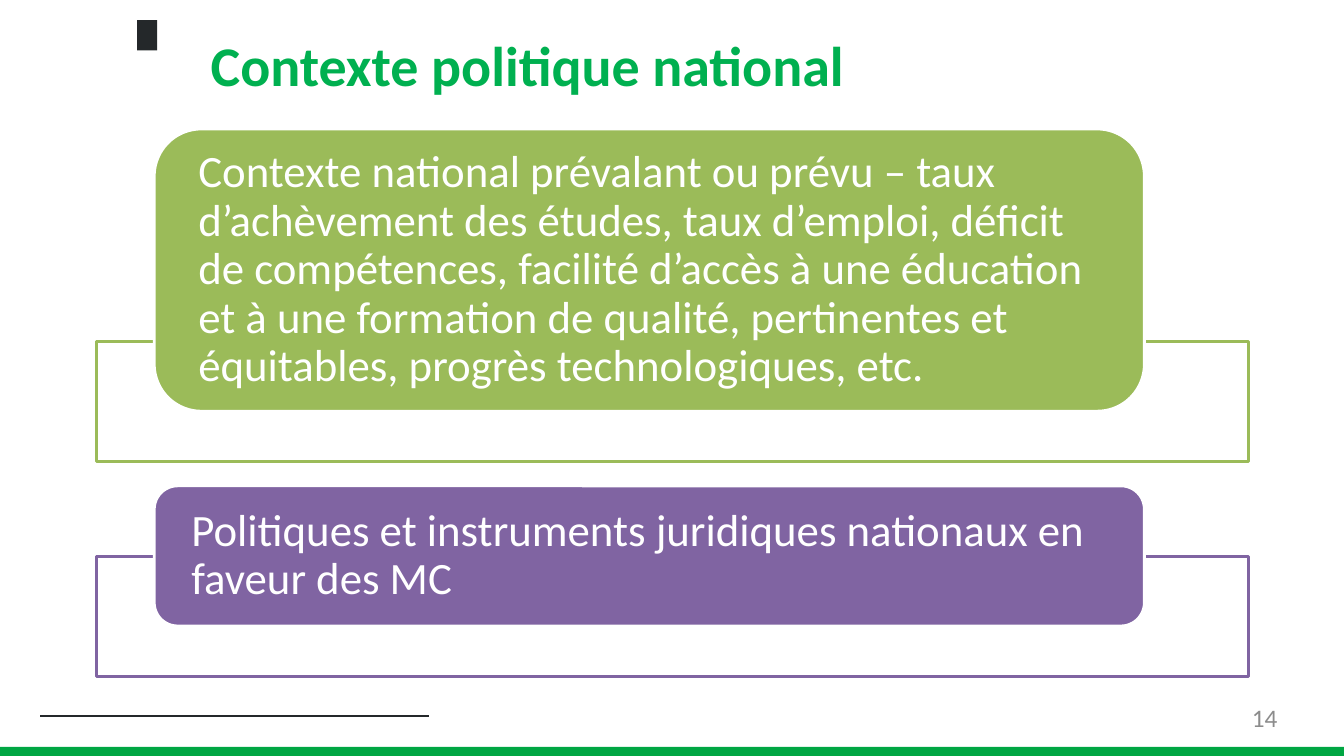
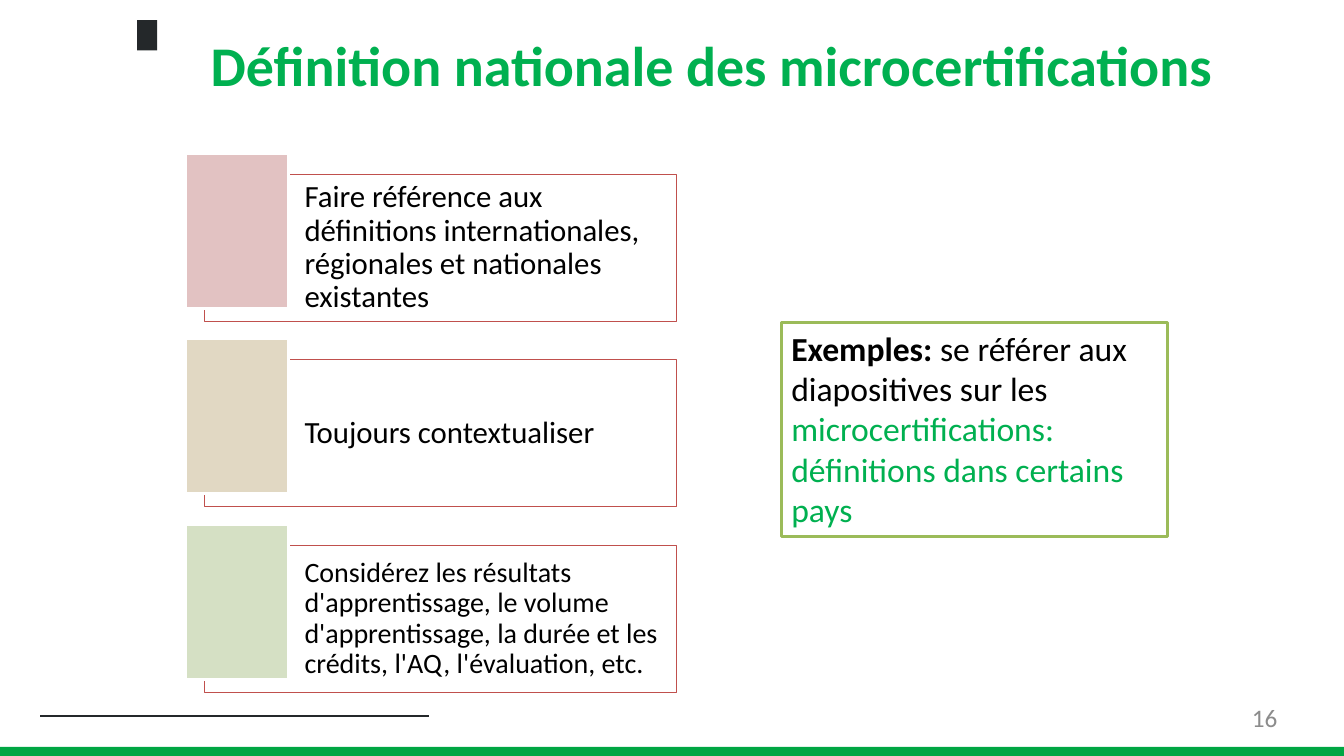
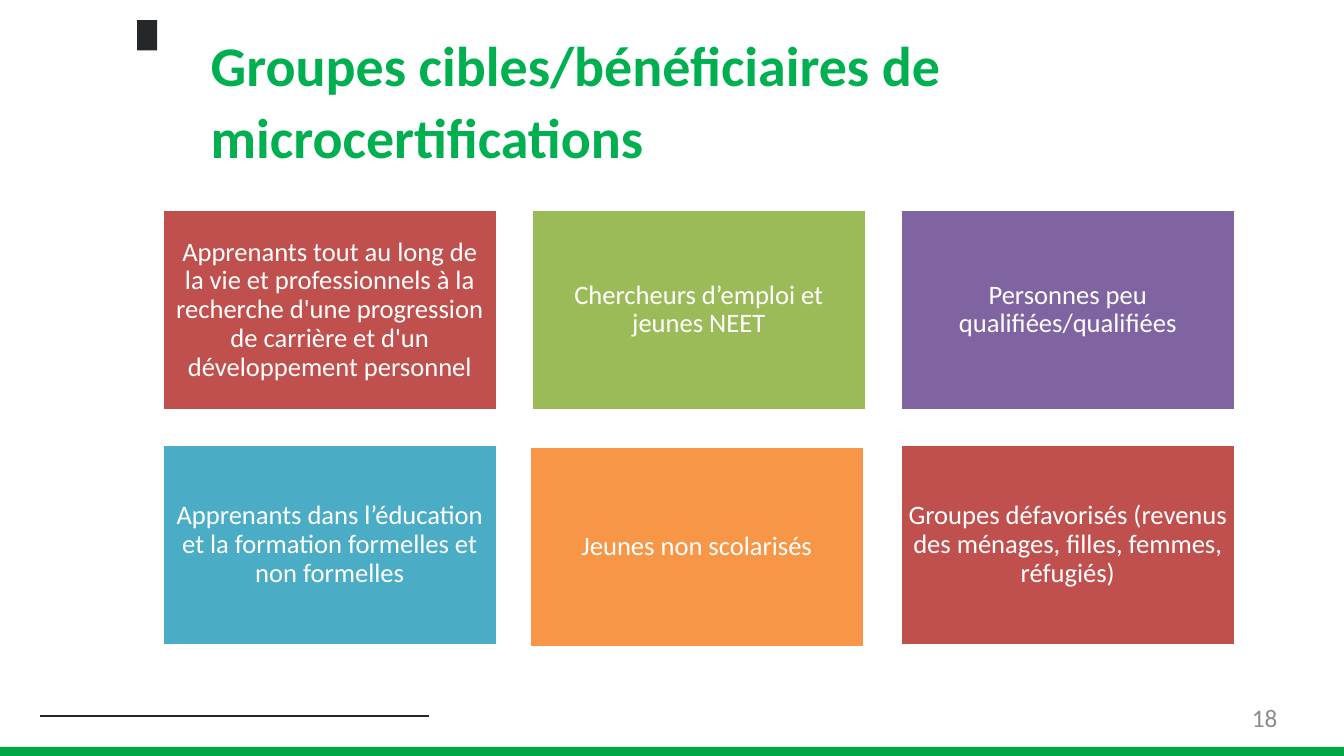
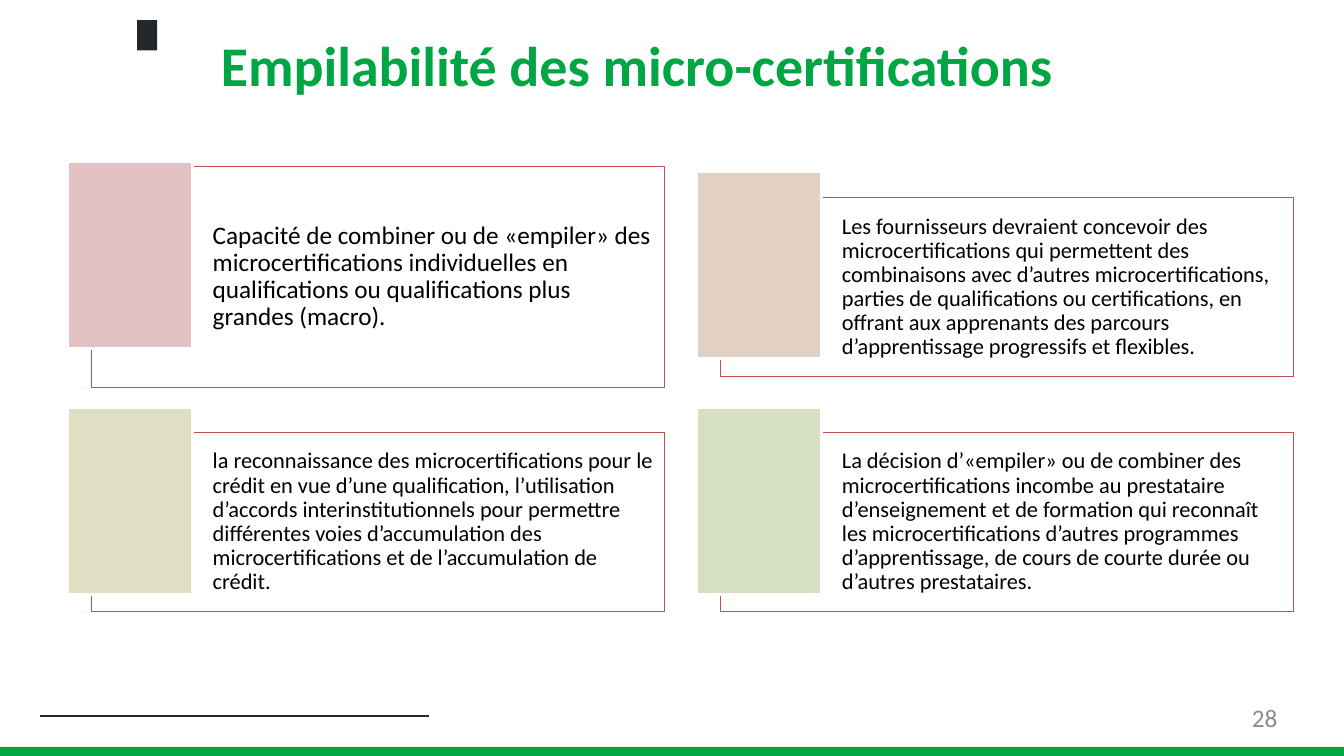
from lxml.etree import SubElement
from pptx import Presentation
from pptx.dml.color import RGBColor
from pptx.enum.shapes import MSO_CONNECTOR, MSO_SHAPE
from pptx.enum.text import MSO_ANCHOR, PP_ALIGN
from pptx.oxml.ns import qn
from pptx.util import Inches, Pt

# Shared look
FONT = "Calibri"
WHITE, BLACK, INK, GREY = "FFFFFF", "000000", "24282A", "8C8C8C"
BAND, GREEN = "00A643", "00B050"
RED, LIME, PURPLE, TEAL, ORANGE = "C0504D", "9BBB59", "8064A2", "4BACC6", "F79646"
ROSE, SAND, CLAY, OLIVE, SAGE = "E2C2C2", "E1D8C3", "E2D1C2", "E1DFC3", "D5E0C4"

# Slide 1: text, colour, pill top and height, frame top
CONTEXT = [
    ("Contexte national prévalant ou prévu – taux d’achèvement des études, "
     "taux d’emploi, déficit de compétences, facilité d’accès à une éducation "
     "et à une formation de qualité, pertinentes et équitables, progrès "
     "technologiques, etc.", LIME, 1.28, 2.8, 3.39),
    ("Politiques et instruments juridiques nationaux en faveur des MC",
     PURPLE, 4.82, 1.39, 5.52),
]

# Slide 2: text, tab colour, text size, inset
STEPS = [
    ("Faire référence aux définitions internationales, régionales et "
     "nationales existantes", ROSE, 22, 0.15),
    ("Toujours contextualiser", SAND, 22, 0.15),
    ("Considérez les résultats d'apprentissage, le volume d'apprentissage, la "
     "durée et les crédits, l'AQ, l'évaluation, etc.", SAGE, 20, 0.08),
]
EXAMPLE = [
    ("Exemples: ", {"bold": True}),
    ("se référer aux diapositives sur les ", {}),
    ("microcertifications: définitions dans certains pays", {"color": GREEN}),
]

# Slide 3: text, colour, shift from the grid
GROUPS = [
    ("Apprenants tout au long de la vie et professionnels à la recherche d'une "
     "progression de carrière et d'un développement personnel", RED, 0),
    ("Chercheurs d’emploi et jeunes NEET", LIME, 0),
    ("Personnes peu qualifiées/qualifiées", PURPLE, 0),
    ("Apprenants dans l’éducation et la formation formelles et non formelles",
     TEAL, 0),
    ("Jeunes non scolarisés", ORANGE, 0.02),
    ("Groupes défavorisés (revenus des ménages, filles, femmes, réfugiés)",
     RED, 0),
]

# Slide 4: text, tab colour, text size, tab top, card top and height
STACK = [
    ("Capacité de combiner ou de «empiler» des microcertifications "
     "individuelles en qualifications ou qualifications plus grandes (macro).",
     ROSE, 18, 1.6, 1.65, 2.19),
    ("Les fournisseurs devraient concevoir des microcertifications qui "
     "permettent des combinaisons avec d’autres microcertifications, parties "
     "de qualifications ou certifications, en offrant aux apprenants des "
     "parcours d’apprentissage progressifs et flexibles.",
     CLAY, 16, 1.7, 1.96, 1.78),
    ("la reconnaissance des microcertifications pour le crédit en vue d’une "
     "qualification, l’utilisation d’accords interinstitutionnels pour "
     "permettre différentes voies d’accumulation des microcertifications et "
     "de l’accumulation de crédit.", OLIVE, 16, 4.04, 4.29, 1.78),
    ("La décision d’«empiler» ou de combiner des microcertifications incombe "
     "au prestataire d’enseignement et de formation qui reconnaît les "
     "microcertifications d’autres programmes d’apprentissage, de cours de "
     "courte durée ou d’autres prestataires.", SAGE, 16, 4.04, 4.29, 1.78),
]


def rgb(color):
    return RGBColor.from_string(color)


def write(shape, text, size=18, color=BLACK, bold=False, align=PP_ALIGN.LEFT,
          anchor=MSO_ANCHOR.MIDDLE, spacing=0.9, inset=(0, 0, 0, 0)):
    """Fill a shape with one paragraph: a string, or (text, format) runs."""
    frame = shape.text_frame
    frame.word_wrap = True
    frame.vertical_anchor = anchor
    (frame.margin_left, frame.margin_top,
     frame.margin_right, frame.margin_bottom) = map(Inches, inset)
    para = frame.paragraphs[0]
    para.alignment = align
    para.line_spacing = spacing
    runs = [(text, {})] if isinstance(text, str) else text
    for words, style in runs:
        run = para.add_run()
        run.text = words
        font = run.font
        font.name, font.size = FONT, Pt(size)
        font.bold = style.get("bold", bold)
        font.color.rgb = rgb(style.get("color", color))


def block(slide, x, y, w, h, fill=WHITE, line=None, width=2,
          kind=MSO_SHAPE.RECTANGLE):
    shape = slide.shapes.add_shape(kind, *map(Inches, (x, y, w, h)))
    shape.shadow.inherit = False
    shape.fill.solid()
    shape.fill.fore_color.rgb = rgb(fill)
    if line:
        shape.line.color.rgb = rgb(line)
        shape.line.width = Pt(width)
    else:
        shape.line.fill.background()
    return shape


def label(slide, x, y, w, h, text, **style):
    box = slide.shapes.add_textbox(*map(Inches, (x, y, w, h)))
    write(box, text, anchor=MSO_ANCHOR.TOP, **style)


def page(deck, title, number, left=2.09, color=GREEN):
    """Add a slide with the shared rule, mark, band, title and number."""
    slide = deck.slides.add_slide(deck.slide_layouts[6])
    rule = slide.shapes.add_connector(
        MSO_CONNECTOR.STRAIGHT, *map(Inches, (0.4, 7.1, 4.25, 7.1)))
    rule.line.color.rgb = rgb(INK)
    rule.line.width = Pt(1.5)
    SubElement(rule._element.spPr, qn("a:effectLst"))
    block(slide, 1.36, 0.2, 0.2, 0.3, INK)
    block(slide, 0, 7.41, 13.33, 0.09, BAND)
    label(slide, left, 0.25, 10.24, 0.72, title, size=40, color=color,
          bold=True, spacing=Pt(51.6))
    label(slide, 9.6, 6.97, 3.07, 0.38, str(number), color=GREY,
          align=PP_ALIGN.RIGHT, spacing=1)
    return slide


def card(slide, text, size, inset, frame, tab, fill):
    """Outlined text card with a coloured tab over its left edge."""
    left, pad = inset
    shape = block(slide, *frame, line=RED, width=0.75)
    write(shape, text, size=size, inset=(left, pad, pad, pad))
    block(slide, *tab, fill=fill, line=WHITE)


def context(deck):
    slide = page(deck, "Contexte politique national", 14)
    for text, color, top, high, base in CONTEXT:
        block(slide, 0.96, base, 11.42, 1.19, line=color)
        pill = block(slide, 1.53, top, 9.82, high, color, WHITE,
                     kind=MSO_SHAPE.ROUNDED_RECTANGLE)
        write(pill, text, size=32, color=WHITE, inset=(0.3, 0, 0.3, 0))


def meaning(deck):
    slide = page(deck, "Définition nationale des microcertifications", 16)
    for row, (text, fill, size, pad) in enumerate(STEPS):
        top = 1.52 + row * 1.84
        card(slide, text, size, (0.99, pad), (2.03, top + 0.21, 4.68, 1.46),
             (1.84, top, 1.02, 1.54), fill)
    note = block(slide, 7.75, 3.2, 3.83, 2.12, line=LIME)
    write(note, EXAMPLE, size=24, anchor=MSO_ANCHOR.TOP, spacing=1,
          inset=(0.1, 0.05, 0.1, 0.05))


def groups(deck):
    slide = page(deck, "Groupes cibles/bénéficiaires de microcertifications", 18)
    for i, (text, fill, shift) in enumerate(GROUPS):
        row, col = divmod(i, 3)
        tile = block(slide, 1.61 + col * 3.66 - shift, 2.08 + row * 2.33 + shift,
                     3.32, 1.99, fill, WHITE)
        write(tile, text, size=19, color=WHITE, align=PP_ALIGN.CENTER,
              inset=(0.08,) * 4)


def stack(deck):
    slide = page(deck, "Empilabilité des micro-certifications", 28,
                 left=2.19, color=BAND)
    for i, (text, fill, size, top, base, high) in enumerate(STACK):
        left = 0.67 + i % 2 * 6.24
        card(slide, text, size, (1.2, 0.07), (left + 0.24, base, 5.68, high),
             (left, top, 1.24, 1.86), fill)


def main():
    deck = Presentation()
    deck.slide_width, deck.slide_height = Inches(13.33), Inches(7.5)
    for build in (context, meaning, groups, stack):
        build(deck)
    deck.save("out.pptx")


if __name__ == "__main__":
    main()
